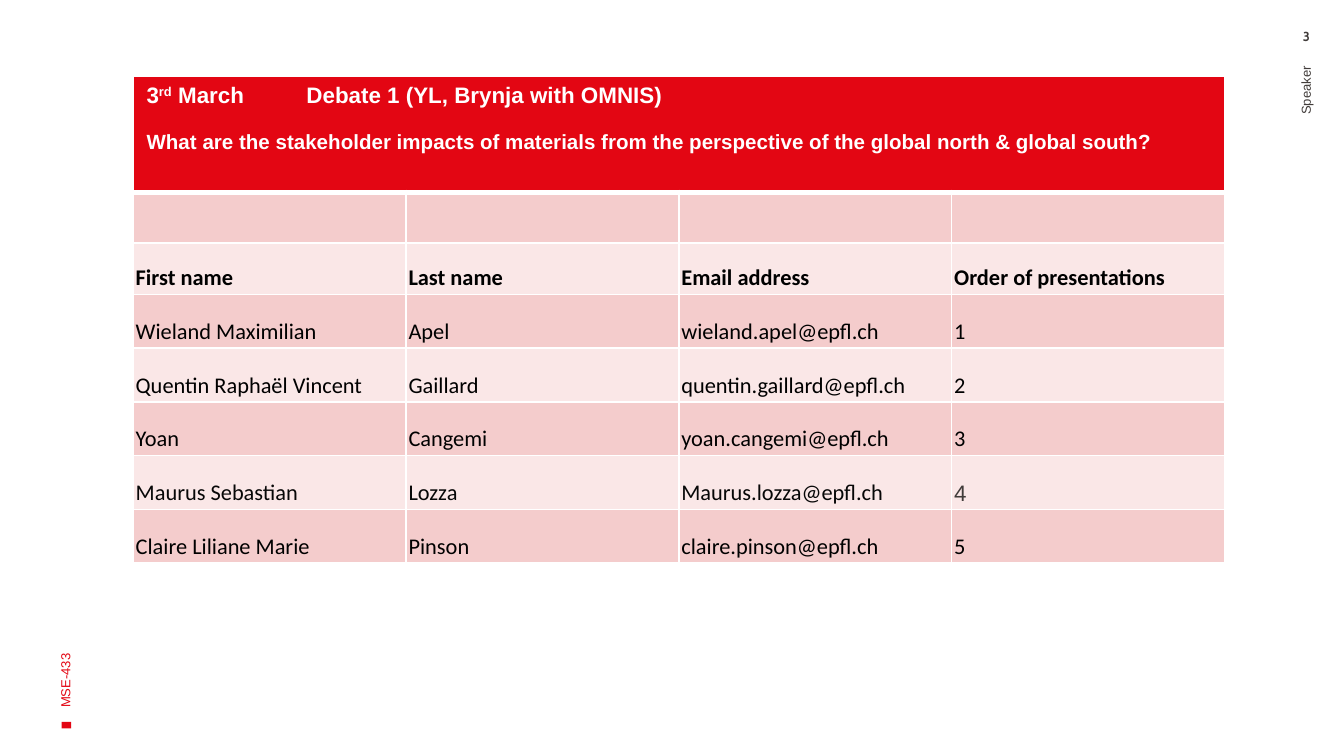
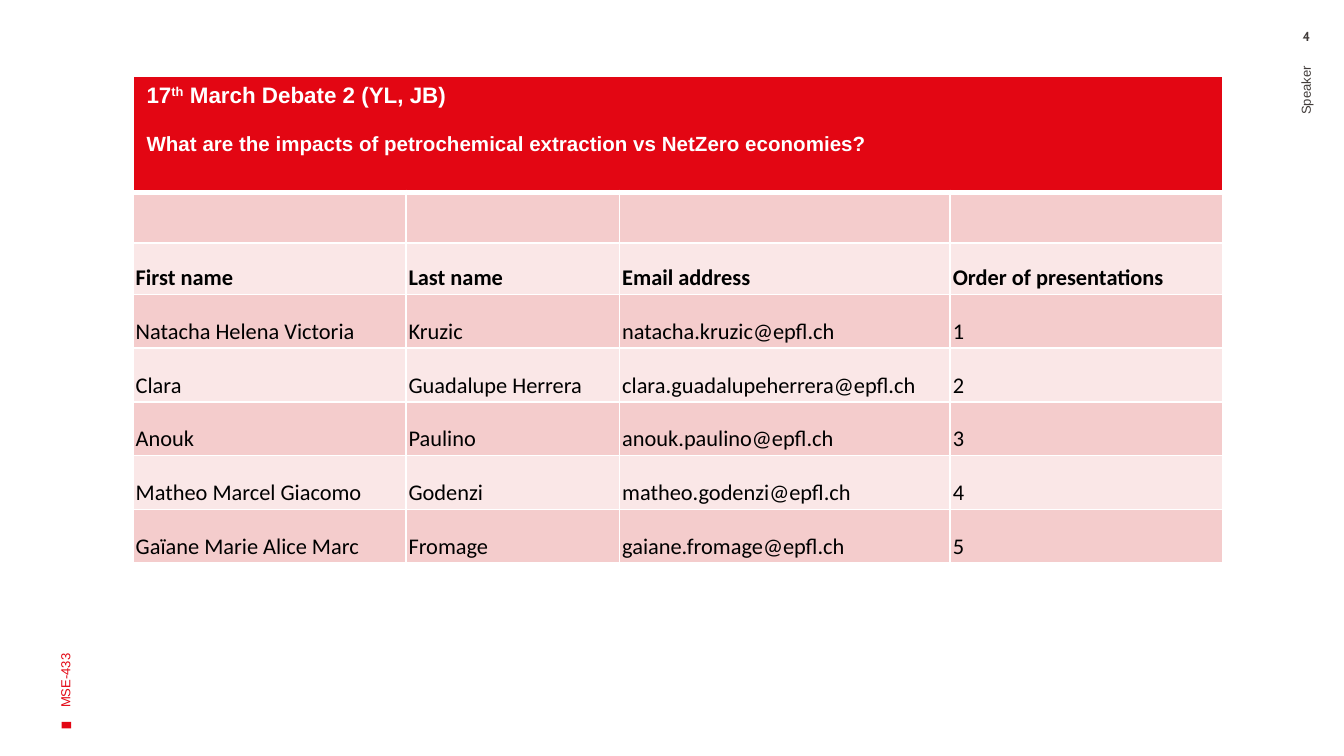
from dataclasses import dataclass, field
from typing import Any

from lxml import etree
from pptx import Presentation
from pptx.dml.color import RGBColor
from pptx.enum.shapes import MSO_SHAPE
from pptx.enum.text import MSO_ANCHOR, PP_ALIGN
from pptx.oxml.ns import qn
from pptx.util import Inches, Pt

RECTANGLE = MSO_SHAPE.RECTANGLE
TOP, MIDDLE, BOTTOM = MSO_ANCHOR.TOP, MSO_ANCHOR.MIDDLE, MSO_ANCHOR.BOTTOM
LEFT, CENTER, RIGHT = PP_ALIGN.LEFT, PP_ALIGN.CENTER, PP_ALIGN.RIGHT

RED, WHITE, BLACK = "E30613", "FFFFFF", "000000"
GREY, NEAR_BLACK = "413C3A", "070707"
BANDS = ("F4CCCC", "FAE7E7")

SLIDE_WIDTH = Inches(10)
SLIDE_HEIGHT = SLIDE_WIDTH * 9 // 16
TABLE_LEFT, TABLE_TOP = 0.99, 0.57
TITLE_HEIGHT, LABEL_HEIGHT, DEBATER_HEIGHT = 0.86, 0.38, 0.4
COLUMN_LABELS = ("First name", "Last name", "Email address", "Order of presentations")
CELL_MARGINS = {"margin_left": Inches(0.02), "margin_right": Inches(0.02),
                "margin_top": 0, "margin_bottom": Inches(0.02)}
BODY = {"name": "Calibri", "size": 12, "color": BLACK, "bold": False}
TITLE = {"name": "Arial", "size": 12, "color": WHITE, "bold": True}


@dataclass(frozen=True)
class MarginText:
    text: str
    box: tuple[float, float, float, float]
    style: dict[str, Any]
    align: Any
    anchor: Any = MIDDLE
    rotation: int = 270
    vertical_inset: float = 0.05


@dataclass(frozen=True)
class Debate:
    number: int
    day: str
    ordinal: str
    heading: str
    question: str
    question_gap: float
    columns: tuple[float, ...]
    debaters: tuple[tuple[str, str, str], ...]
    # Format changes keyed by (debater index, column index)
    exceptions: dict[tuple[int, int], dict[str, Any]] = field(default_factory=dict)


COURSE = MarginText("MSE-433", (-1.34, 3.04, 3.65, 1),
                    {"name": "Arial", "size": 7, "color": RED}, LEFT)
SPEAKER = MarginText("Speaker", (7.78, 2.05, 3.87, 0.56),
                     {"name": "Arial", "size": 7, "color": GREY}, RIGHT)

DEBATES = (
    Debate(
        3, "3", "rd", " March\tDebate 1 (YL, Brynja with OMNIS)",
        "What are the stakeholder impacts of materials from the perspective "
        "of the global north & global south?",
        12, (2.03, 2.03, 2.03, 2.03),
        (("Wieland Maximilian", "Apel", "wieland.apel@epfl.ch"),
         ("Quentin Raphaël Vincent", "Gaillard", "quentin.gaillard@epfl.ch"),
         ("Yoan", "Cangemi", "yoan.cangemi@epfl.ch"),
         ("Maurus Sebastian", "Lozza", "Maurus.lozza@epfl.ch"),
         ("Claire Liliane Marie", "Pinson", "claire.pinson@epfl.ch")),
        {**{(3, column): {"color": NEAR_BLACK} for column in range(3)},
         (3, 3): {"name": "Arial", "color": GREY}},
    ),
    Debate(
        4, "17", "th", " March Debate 2 (YL, JB)",
        "What are the impacts of petrochemical extraction vs NetZero economies?",
        13, (2.03, 1.59, 2.46, 2.03),
        (("Natacha Helena Victoria", "Kruzic", "natacha.kruzic@epfl.ch"),
         ("Clara", "Guadalupe Herrera", "clara.guadalupeherrera@epfl.ch"),
         ("Anouk", "Paulino", "anouk.paulino@epfl.ch"),
         ("Matheo Marcel Giacomo", "Godenzi", "matheo.godenzi@epfl.ch"),
         ("Gaïane Marie Alice Marc", "Fromage", "gaiane.fromage@epfl.ch")),
    ),
)


def rgb(color: str) -> RGBColor:
    return RGBColor.from_string(color)


def set_attributes(target: Any, values: dict[str, Any]) -> None:
    for attribute, value in values.items():
        setattr(target, attribute, value)


def add_run(paragraph: Any, text: str, style: dict[str, Any]) -> Any:
    run = paragraph.add_run()
    run.text = text
    values = {key: value for key, value in style.items() if key != "color"}
    set_attributes(run.font, {**values, "size": Pt(style["size"])})
    run.font.color.rgb = rgb(style["color"])
    return run


def add_margin_text(slide: Any, label: MarginText) -> None:
    box = slide.shapes.add_textbox(*map(Inches, label.box))
    box.rotation = label.rotation
    inset = Inches(label.vertical_inset)
    set_attributes(box.text_frame, {
        "word_wrap": True, "vertical_anchor": label.anchor,
        "margin_top": inset, "margin_bottom": inset})
    paragraph = box.text_frame.paragraphs[0]
    paragraph.alignment = label.align
    add_run(paragraph, label.text, label.style)


def add_page_frame(slide: Any, number: int) -> None:
    """Draw the course mark, the speaker label and the page number."""
    marker = slide.shapes.add_shape(
        RECTANGLE, *map(Inches, (0.47, 5.36, 0.05, 0.07)))
    marker.rotation = 270
    marker.shadow.inherit = False
    marker.fill.solid()
    marker.fill.fore_color.rgb = rgb(RED)
    marker.line.fill.background()
    page = MarginText(str(number), (9.44, 0.21, 0.56, 0.18),
                      {"name": "Cabin", "size": 7, "color": GREY, "bold": True},
                      CENTER, TOP, 0, 0)
    for label in (COURSE, SPEAKER, page):
        add_margin_text(slide, label)


def paint_cell(cell: Any, color: str, bottom_width: float = 1) -> None:
    """Give a cell white borders and a solid fill."""
    properties = cell._tc.get_or_add_tcPr()
    for side, width in (("L", 1), ("R", 1), ("T", 1), ("B", bottom_width)):
        border = etree.SubElement(properties, qn(f"a:ln{side}"), w=str(Pt(width)))
        solid = etree.SubElement(border, qn("a:solidFill"))
        etree.SubElement(solid, qn("a:srgbClr"), val=WHITE)
    cell.fill.solid()
    cell.fill.fore_color.rgb = rgb(color)


def fill_title(cell: Any, debate: Debate) -> None:
    heading = cell.text_frame.paragraphs[0]
    if "\t" in debate.heading:
        tabs = etree.SubElement(heading._p.get_or_add_pPr(), qn("a:tabLst"))
        etree.SubElement(tabs, qn("a:tab"), pos=str(Inches(1.19)), algn="l")
    add_run(heading, debate.day, TITLE)
    ordinal = add_run(heading, debate.ordinal, TITLE)
    ordinal._r.get_or_add_rPr().set("baseline", "30000")
    add_run(heading, debate.heading, TITLE)
    question = cell.text_frame.add_paragraph()
    question.space_before = Pt(debate.question_gap)
    add_run(question, debate.question, {**TITLE, "size": 11})


def add_debate_table(slide: Any, debate: Debate) -> None:
    heights = (TITLE_HEIGHT, LABEL_HEIGHT, LABEL_HEIGHT,
               *(DEBATER_HEIGHT for _ in debate.debaters))
    table = slide.shapes.add_table(
        len(heights), len(debate.columns), Inches(TABLE_LEFT), Inches(TABLE_TOP),
        Inches(sum(debate.columns)), Inches(sum(heights))).table
    table.horz_banding = False
    for column, width in zip(table.columns, debate.columns):
        column.width = Inches(width)
    for row, height in zip(table.rows, heights):
        row.height = Inches(height)

    for cell in table.rows[0].cells:
        paint_cell(cell, RED, bottom_width=3)
    table.cell(0, 0).merge(table.cell(0, len(debate.columns) - 1))
    fill_title(table.cell(0, 0), debate)

    debater_rows = [(*debater, str(order))
                    for order, debater in enumerate(debate.debaters, 1)]
    body_rows = [("",) * len(COLUMN_LABELS), COLUMN_LABELS, *debater_rows]
    for row_index, texts in enumerate(body_rows):
        for column_index, text in enumerate(texts):
            cell = table.cell(row_index + 1, column_index)
            paint_cell(cell, BANDS[row_index % 2])
            set_attributes(cell, {**CELL_MARGINS, "vertical_anchor": BOTTOM})
            if text:
                changes = debate.exceptions.get((row_index - 2, column_index), {})
                style = {**BODY, "bold": texts is COLUMN_LABELS, **changes}
                add_run(cell.text_frame.paragraphs[0], text, style)


def main() -> None:
    presentation = Presentation()
    presentation.slide_width = SLIDE_WIDTH
    presentation.slide_height = SLIDE_HEIGHT
    for debate in DEBATES:
        slide = presentation.slides.add_slide(presentation.slide_layouts[6])
        add_page_frame(slide, debate.number)
        add_debate_table(slide, debate)
    presentation.save("out.pptx")


if __name__ == "__main__":
    main()
